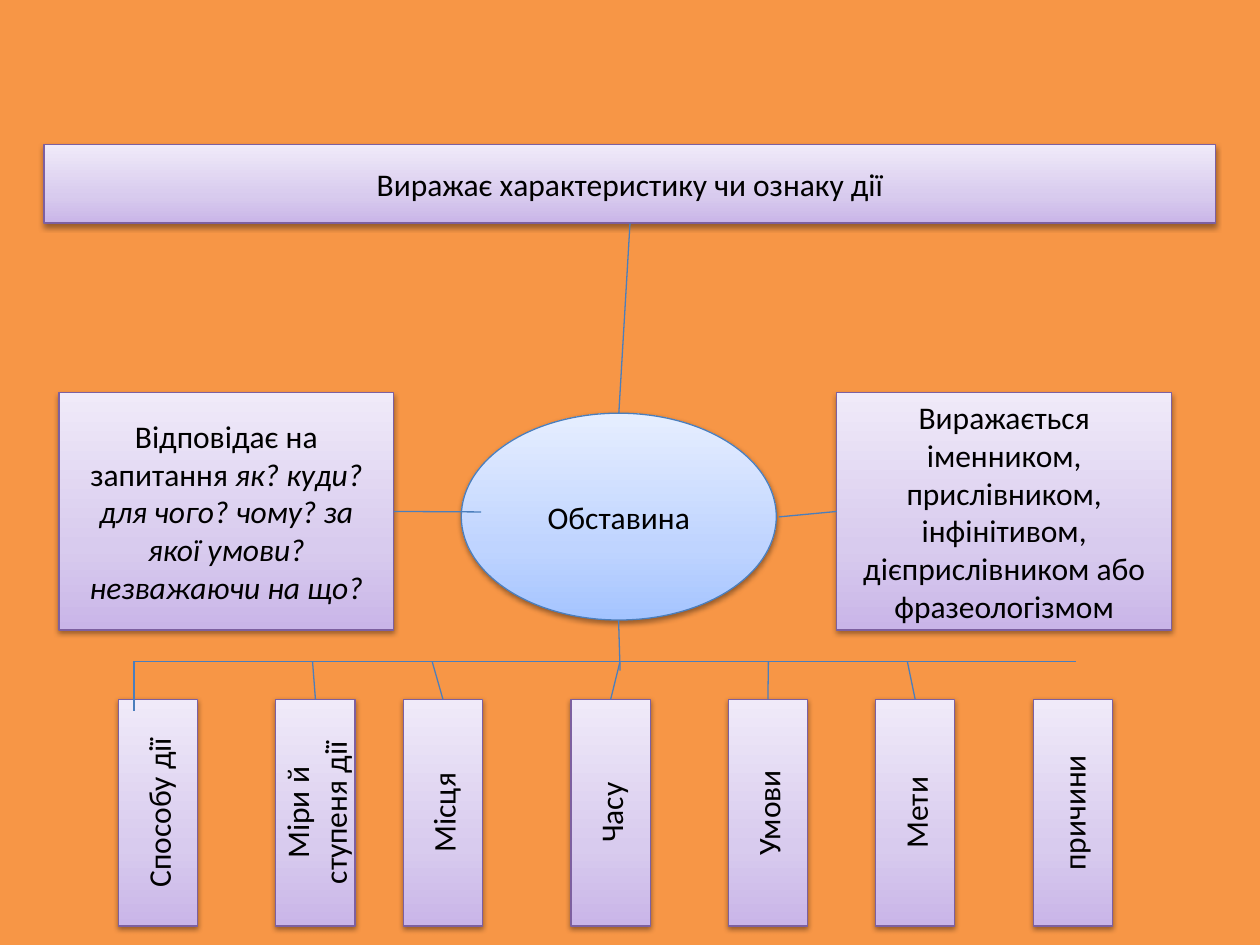
from copy import deepcopy

from lxml import etree
from pptx import Presentation
from pptx import util as u
from pptx.dml.color import RGBColor
from pptx.enum import shapes, text
from pptx.oxml import ns, parse_xml

COLOURS = {
    "background": "F79646",
    "text": "000000",
    "violet_line": "7D60A0",
    "blue_line": "4B7EBC",
}
GRADIENTS = {
    "violet": ("C9B5E8", "D8CBEE", "F0EAF9"),
    "blue": ("A4C4FF", "BFD4FF", "E6EEFF"),
}
SHADOW = (
    f'<a:outerShdw {ns.nsdecls("a")} blurRad="40000" dist="20000" dir="5400000" '
    'rotWithShape="0"><a:srgbClr val="000000"><a:alpha val="38000"/>'
    "</a:srgbClr></a:outerShdw>"
)


def colour(name):
    return RGBColor.from_string(COLOURS[name])


class Diagram:
    font = "Calibri"
    size = u.Pt(18)
    line_width = u.Pt(0.75)

    def __init__(self, presentation):
        self.slide = presentation.slides.add_slide(presentation.slide_layouts[6])
        background = self.slide.background.fill
        background.solid()
        background.fore_color.rgb = colour("background")

    def paint(self, shape, palette):
        shape.fill.gradient()
        shape.fill.gradient_angle = 90
        stop_list = shape._element.spPr.find(".//" + ns.qn("a:gsLst"))
        stop_list.insert(1, deepcopy(stop_list[0]))
        stops = zip(shape.fill.gradient_stops, (0, 0.35, 1), GRADIENTS[palette])
        for stop, position, value in stops:
            stop.position = position
            stop.color.rgb = RGBColor.from_string(value)
        shape.line.color.rgb = colour(palette + "_line")
        shape.line.width = self.line_width
        shape.shadow.inherit = False
        effects = shape._element.spPr.find(ns.qn("a:effectLst"))
        effects.append(parse_xml(SHADOW))

    def node(self, left, top, width, height, runs, palette="violet",
             kind=shapes.MSO_SHAPE.RECTANGLE, vertical=False):
        shape = self.slide.shapes.add_shape(
            kind, u.Cm(left), u.Cm(top), u.Cm(width), u.Cm(height))
        self.paint(shape, palette)
        frame = shape.text_frame
        frame.word_wrap = True
        frame.vertical_anchor = text.MSO_ANCHOR.MIDDLE
        if vertical:
            frame._txBody.bodyPr.set("vert", "vert270")
        paragraph = frame.paragraphs[0]
        paragraph.alignment = text.PP_ALIGN.CENTER
        for words, italic in runs:
            run = paragraph.add_run()
            run.text = words
            run.font.name = self.font
            run.font.size = self.size
            run.font.italic = italic
            run.font.color.rgb = colour("text")
        return shape

    def line(self, start, end, begin_at=None, end_at=None):
        connector = self.slide.shapes.add_connector(
            shapes.MSO_CONNECTOR.STRAIGHT, *(u.Cm(value) for value in start + end))
        if begin_at:
            connector.begin_connect(*begin_at)
        if end_at:
            connector.end_connect(*end_at)
        connector.line.color.rgb = colour("blue_line")
        connector.line.width = self.line_width
        etree.SubElement(connector._element.spPr, ns.qn("a:effectLst"))


def main():
    presentation = Presentation()
    presentation.slide_width = u.Cm(25.4)
    presentation.slide_height = u.Cm(19.05)
    diagram = Diagram(presentation)

    meaning = diagram.node(
        0.89, 2.92, 23.62, 1.58, [("Виражає характеристику чи ознаку дії", None)])
    questions = diagram.node(1.19, 7.92, 6.75, 4.78, [
        ("Відповідає на запитання ", None),
        ("як? куди? для чого? чому? за якої умови? незважаючи на що?", True),
    ])
    adverbial = diagram.node(
        9.3, 8.33, 6.35, 4.17, [("Обставина", None)], "blue", shapes.MSO_SHAPE.OVAL)
    expression = diagram.node(16.87, 7.92, 6.75, 4.78, [
        ("Виражається іменником, прислівником, інфінітивом, "
         "дієприслівником або фразеологізмом", None),
    ])

    types = [
        ("Способу дії", 2.39, None),
        ("Міри й ступеня дії", 5.56, 6.3),
        ("Місця", 8.13, 8.71),
        ("Часу", 11.51, 12.5),
        ("Умови", 14.68, 15.49),
        ("Мети", 17.65, 18.29),
        ("причини", 20.83, None),
    ]
    tabs = [diagram.node(left, 14.1, 1.6, 4.57, [(name, None)], vertical=True)
            for name, left, branch in types]

    rail = 13.33
    diagram.line((7.94, 10.31), (9.7, 10.32), begin_at=(questions, 3))
    diagram.line((15.7, 10.42), (16.87, 10.31), end_at=(expression, 1))
    diagram.line((12.7, 4.5), (12.47, 8.33), (meaning, 2), (adverbial, 0))
    diagram.line((2.7, rail), (21.7, rail))
    diagram.line((12.47, 12.5), (12.5, 13.52))
    diagram.line((2.7, rail), (2.7, 14.33))
    for (name, left, branch), tab in zip(types, tabs):
        if branch:
            diagram.line((branch, rail), (left + 0.8, 14.1), end_at=(tab, 0))

    presentation.save("out.pptx")


if __name__ == "__main__":
    main()
